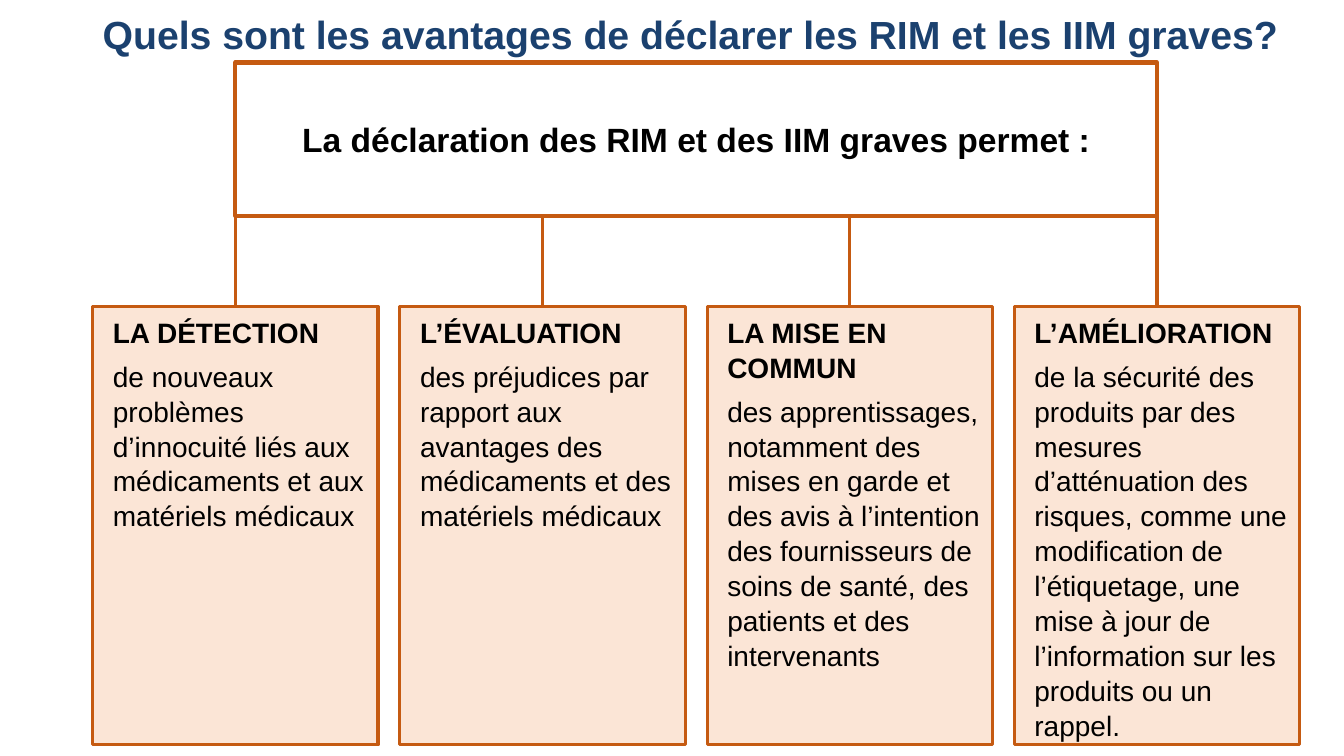
from lxml import etree
from pptx import Presentation
from pptx.dml.color import RGBColor
from pptx.enum.shapes import MSO_CONNECTOR, MSO_SHAPE
from pptx.enum.text import MSO_ANCHOR, PP_ALIGN
from pptx.oxml.ns import qn
from pptx.util import Inches, Pt

STRAIGHT = MSO_CONNECTOR.STRAIGHT
RECTANGLE = MSO_SHAPE.RECTANGLE
TOP, MIDDLE = MSO_ANCHOR.TOP, MSO_ANCHOR.MIDDLE
LEFT, CENTER = PP_ALIGN.LEFT, PP_ALIGN.CENTER
ORANGE, PEACH, WHITE, BLACK, NAVY = "C55A11", "FBE5D6", "FFFFFF", "000000", "1B416F"

CARD_LEFT, LAST_CARD_LEFT = 0.92, 10.06
CARD_TOP, CARD_WIDTH, CARD_HEIGHT = 3.04, 2.83, 4.35
ROOT_TOP, ROOT_HEIGHT = 0.62, 1.52

benefits = [
    ("LA DÉTECTION",
     "de nouveaux problèmes d’innocuité liés aux médicaments et aux matériels médicaux", 0.1),
    ("L’ÉVALUATION",
     "des préjudices par rapport aux avantages des médicaments et des matériels médicaux", 0.1),
    ("LA MISE EN COMMUN",
     "des apprentissages, notamment des mises en garde et des avis à l’intention des "
     "fournisseurs de soins de santé, des patients et des intervenants", 0.12),
    ("L’AMÉLIORATION",
     "de la sécurité des produits par des mesures d’atténuation des risques, comme une "
     "modification de l’étiquetage, une mise à jour de l’information sur les produits "
     "ou un rappel.", 0.04),
]
pitch = (LAST_CARD_LEFT - CARD_LEFT) / (len(benefits) - 1)


def color(hex_string):
    return RGBColor.from_string(hex_string)


def write(paragraph, text, size, ink, bold, align):
    paragraph.text = text
    paragraph.alignment = align
    paragraph.font.name = "Arial"
    paragraph.font.size = Pt(size)
    paragraph.font.bold = bold
    paragraph.font.color.rgb = color(ink)


deck = Presentation()
deck.slide_width, deck.slide_height = Inches(13.33), Inches(7.5)
slide = deck.slides.add_slide(deck.slide_layouts[6])
shapes = slide.shapes

stems = []
for column in range(len(benefits)):
    center = Inches(CARD_LEFT + column * pitch + CARD_WIDTH / 2)
    stem = shapes.add_connector(
        STRAIGHT, center, Inches(ROOT_TOP + ROOT_HEIGHT), center, Inches(CARD_TOP))
    stem.line.color.rgb = color(ORANGE)
    stem.line.width = Pt(2.25)
    etree.SubElement(stem._element.spPr, qn("a:effectLst"))
    stems.append(stem)

for column, (heading, detail, right_inset) in enumerate(benefits):
    card = shapes.add_shape(
        RECTANGLE, Inches(CARD_LEFT + column * pitch), Inches(CARD_TOP),
        Inches(CARD_WIDTH), Inches(CARD_HEIGHT))
    card.shadow.inherit = False
    card.fill.solid()
    card.fill.fore_color.rgb = color(PEACH)
    card.line.color.rgb = color(ORANGE)
    card.line.width = Pt(2.25)
    stems[column].end_connect(card, 0)
    frame = card.text_frame
    frame.word_wrap = True
    frame.vertical_anchor = TOP
    frame.margin_left, frame.margin_top = Inches(0.2), Inches(0.08)
    frame.margin_right, frame.margin_bottom = Inches(right_inset), Inches(0.28)
    write(frame.paragraphs[0], heading, 20, BLACK, True, LEFT)
    write(frame.add_paragraph(), detail, 20, BLACK, False, LEFT)
    for paragraph in frame.paragraphs:
        paragraph.space_before = Pt(6)
        paragraph.line_spacing = 1.04

root = shapes.add_shape(
    RECTANGLE, Inches(CARD_LEFT + CARD_WIDTH / 2), Inches(ROOT_TOP),
    Inches(LAST_CARD_LEFT - CARD_LEFT), Inches(ROOT_HEIGHT))
root.shadow.inherit = False
root.fill.solid()
root.fill.fore_color.rgb = color(WHITE)
root.line.color.rgb = color(ORANGE)
root.line.width = Pt(3)
root.text_frame.word_wrap = True
root.text_frame.vertical_anchor = MIDDLE
write(root.text_frame.paragraphs[0],
      "La déclaration des RIM et des IIM graves permet :", 24, BLACK, True, CENTER)

title = shapes.add_textbox(Inches(CARD_LEFT), Inches(0.11), Inches(11.98), Inches(0.88))
title.text_frame.word_wrap = True
title.text_frame.vertical_anchor = TOP
question = title.text_frame.paragraphs[0]
write(question, "Quels sont les avantages de déclarer les RIM et les IIM graves?",
      28, NAVY, True, LEFT)
question.line_spacing = 0.9

deck.save("out.pptx")
